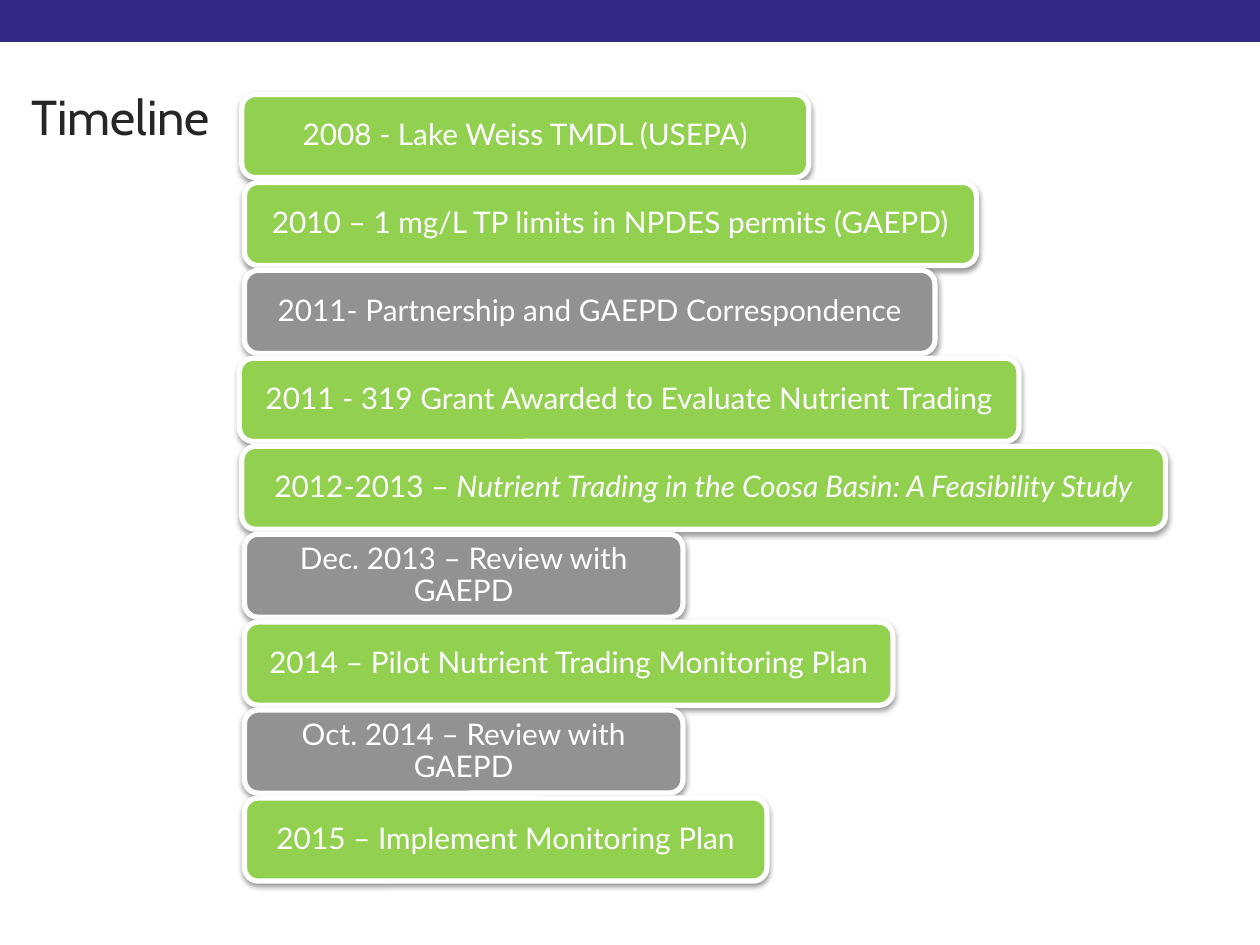
from lxml.etree import SubElement
from pptx import Presentation
from pptx.dml.color import RGBColor
from pptx.enum.shapes import MSO_SHAPE as Shape
from pptx.enum.text import MSO_ANCHOR as Anchor, PP_ALIGN as Align
from pptx.oxml.ns import qn
from pptx.util import Pt

INDIGO = RGBColor(0x33, 0x2A, 0x86)
GREEN = RGBColor(0x92, 0xD0, 0x50)
GRAY = RGBColor(0x92, 0x92, 0x92)
WHITE = RGBColor(0xFF, 0xFF, 0xFF)
CHARCOAL = RGBColor(0x26, 0x26, 0x26)

PAGE_WIDTH, PAGE_HEIGHT = 720, 540
STEP_HEIGHT = 47.5

STEPS = [
    (138.2, 324, GREEN, "2008 - Lake Weiss TMDL (USEPA)", ""),
    (139.7, 418.3, GREEN, "2010 – 1 mg/L TP limits in NPDES permits (GAEPD)", ""),
    (139.7, 394.6, GRAY, "2011- Partnership and GAEPD Correspondence", ""),
    (136.8, 445.5, GREEN, "2011 - 319 Grant Awarded to Evaluate Nutrient Trading", ""),
    (138.2, 527.8, GREEN, "2012-2013 – ",
     "Nutrient Trading in the Coosa Basin: A Feasibility Study"),
    (139.7, 250.6, GRAY, "Dec. 2013 – Review with GAEPD", ""),
    (139.7, 370.6, GREEN, "2014 – Pilot Nutrient Trading Monitoring Plan", ""),
    (139.7, 250.6, GRAY, "Oct. 2014 – Review with GAEPD", ""),
    (139.7, 298.6, GREEN, "2015 – Implement Monitoring Plan", ""),
]


def write_text(shape, text, italic_text="", *, font, size, color, align, spacing, insets):
    frame = shape.text_frame
    frame.word_wrap = True
    frame.vertical_anchor = Anchor.MIDDLE
    frame.margin_left, frame.margin_top, frame.margin_right, frame.margin_bottom = map(Pt, insets)
    para = frame.paragraphs[0]
    para.alignment = align
    para.line_spacing = spacing
    for content, italic in ((text, False), (italic_text, True)):
        if content:
            span = para.add_run()
            span.text = content
            span.font.name = font
            span.font.size = Pt(size)
            span.font.color.rgb = color
            span.font.bold = False
            span.font.italic = italic


def add_block(page, kind, box, fill):
    block = page.shapes.add_shape(kind, *map(Pt, box))
    block.shadow.inherit = False
    block.fill.solid()
    block.fill.fore_color.rgb = fill
    return block


def add_shadow(shape):
    effects = shape.element.spPr.find(qn("a:effectLst"))
    shadow = SubElement(effects, qn("a:outerShdw"), blurRad=str(Pt(3.1)),
                        dist=str(Pt(1.6)), dir="5400000", rotWithShape="0")
    color = SubElement(shadow, qn("a:srgbClr"), val="000000")
    SubElement(color, qn("a:alpha"), val="38000")


def add_banner(page, box):
    banner = add_block(page, Shape.RECTANGLE, box, INDIGO)
    banner.line.fill.background()


def add_title(page, box):
    title = page.shapes.title
    title.left, title.top, title.width, title.height = map(Pt, box)
    write_text(title, "Timeline", font="Cabin", size=28, color=CHARCOAL,
               align=Align.LEFT, spacing=0.85, insets=(0, 3.6, 7.2, 3.6))


def add_timeline(page, top, height):
    pitch = (height - STEP_HEIGHT) / (len(STEPS) - 1)
    for index, (left, width, fill, text, italic_text) in enumerate(STEPS):
        box = (left, top + index * pitch, width, STEP_HEIGHT)
        step = add_block(page, Shape.ROUNDED_RECTANGLE, box, fill)
        step.line.color.rgb = WHITE
        step.line.width = Pt(3)
        add_shadow(step)
        write_text(step, text, italic_text, font="Lato", size=17, color=WHITE,
                   align=Align.CENTER, spacing=0.9, insets=(5, 2.9, 5, 2.9))


def main():
    deck = Presentation()
    deck.slide_width, deck.slide_height = Pt(PAGE_WIDTH), Pt(PAGE_HEIGHT)
    page = deck.slides.add_slide(deck.slide_layouts[5])
    add_banner(page, (0, 0, PAGE_WIDTH, 24))
    add_timeline(page, 54, 449.5)
    add_title(page, (18, 42, 174, 54))
    deck.save("out.pptx")


if __name__ == "__main__":
    main()
